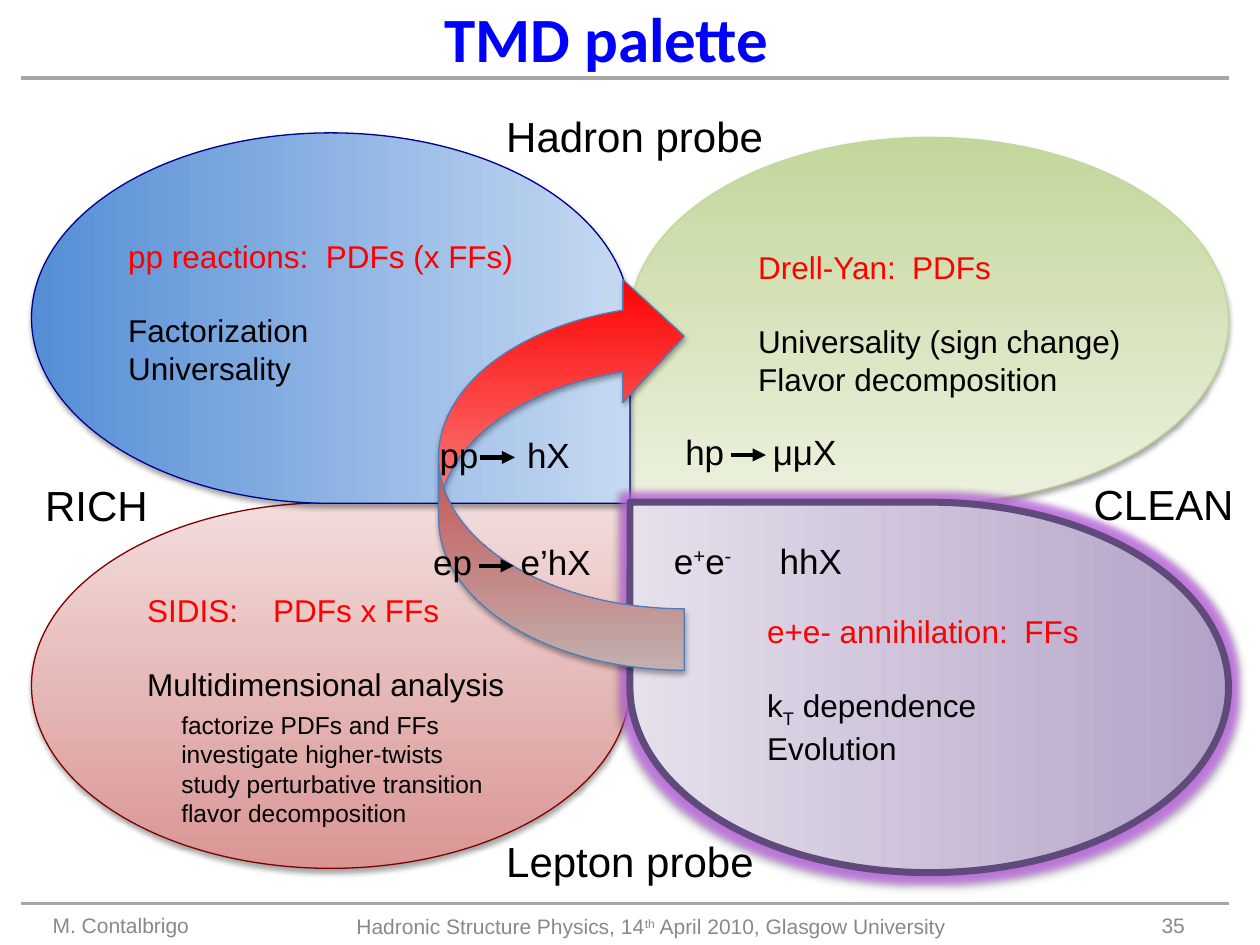
from lxml import etree
from pptx import Presentation
from pptx.dml.color import RGBColor
from pptx.enum.shapes import MSO_CONNECTOR, MSO_SHAPE
from pptx.enum.text import MSO_ANCHOR, MSO_AUTO_SIZE, PP_ALIGN
from pptx.oxml import parse_xml
from pptx.oxml.ns import qn
from pptx.util import Pt

TEARDROP = MSO_SHAPE.TEAR
CURVED_ARROW = MSO_SHAPE.CURVED_LEFT_ARROW
STRAIGHT = MSO_CONNECTOR.STRAIGHT
LEFT, CENTER, RIGHT = PP_ALIGN.LEFT, PP_ALIGN.CENTER, PP_ALIGN.RIGHT
TOP, MIDDLE, BOTTOM = MSO_ANCHOR.TOP, MSO_ANCHOR.MIDDLE, MSO_ANCHOR.BOTTOM
NO_AUTOFIT = MSO_AUTO_SIZE.NONE

BLACK, RED, BLUE, GREY, RULE = "000000", "FF0000", "0000FF", "898989", "A6A6A6"
SUPER, SUB = 30, -25
DRAWING_NS = "http://schemas.openxmlformats.org/drawingml/2006/main"
SHADOW = (
    '<a:outerShdw blurRad="40000" dist="23000" dir="5400000" rotWithShape="0">'
    '<a:srgbClr val="000000"><a:alpha val="35000"/></a:srgbClr></a:outerShdw>'
)
GLOW = (
    '<a:glow rad="101600"><a:srgbClr val="C065E6">'
    '<a:alpha val="75000"/></a:srgbClr></a:glow>'
)


def rgb(value):
    return RGBColor.from_string(value)


def effects(content):
    return parse_xml(f'<a:effectLst xmlns:a="{DRAWING_NS}">{content}</a:effectLst>')


class Palette:
    font = "Arial"

    def __init__(self, slide):
        self.slide = slide

    def title(self, box, text):
        heading = self.slide.shapes.title
        heading.left, heading.top, heading.width, heading.height = map(Pt, box)
        self.frame(heading.text_frame, MIDDLE)
        self.paragraph(heading.text_frame.paragraphs[0], [(text,)], 36, BLUE,
                       align=CENTER, font="Calibri", bold=True)

    def frame(self, frame, anchor):
        frame.word_wrap = True
        frame.auto_size = NO_AUTOFIT
        frame.vertical_anchor = anchor

    def paragraph(self, paragraph, runs, size, color=BLACK, align=LEFT, tab=None,
                  indent=0, before=0, font=None, bold=False):
        properties = paragraph._p.get_or_add_pPr()
        if indent:
            properties.set("marL", str(Pt(indent)))
        if before:
            paragraph.space_before = Pt(before)
        if tab:
            stops = etree.SubElement(properties, qn("a:tabLst"))
            etree.SubElement(stops, qn("a:tab"), pos=str(Pt(tab)), algn="l")
        paragraph.alignment = align
        for text, *baseline in runs:
            run = paragraph.add_run()
            run.text = text
            run.font.name = font or self.font
            run.font.size = Pt(size)
            run.font.bold = bold
            run.font.color.rgb = rgb(color)
            if baseline:
                run._r.get_or_add_rPr().set("baseline", str(baseline[0] * 1000))

    def text(self, box, runs, size, anchor=TOP, shapes=None, **style):
        shapes = shapes or self.slide.shapes
        frame = shapes.add_textbox(*map(Pt, box)).text_frame
        self.frame(frame, anchor)
        self.paragraph(frame.paragraphs[0], runs, size, **style)
        return frame

    def topic(self, box, heading, tab, first, *others):
        frame = self.text(box, [(heading,)], 18, color=RED, tab=tab)
        self.paragraph(frame.add_paragraph(), first, 18, before=20.7)
        for line in others:
            self.paragraph(frame.add_paragraph(), [(line,)], 18)
        return frame

    def shape(self, kind, box, rotation, colors, outline, width=0.75, glow=""):
        shape = self.slide.shapes.add_shape(kind, *map(Pt, box))
        shape.rotation = rotation
        shape.fill.gradient()
        shape.fill.gradient_angle = 90
        for stop, color, position in zip(shape.fill.gradient_stops, colors, (0, 1)):
            stop.color.rgb = rgb(color)
            stop.position = position
        shape.line.color.rgb = rgb(outline)
        shape.line.width = Pt(width)
        shape._element.spPr.append(effects(glow + SHADOW))

    def petal(self, center, size, rotation, colors, outline, **style):
        (x, y), (w, h) = center, size
        self.shape(TEARDROP, (x - w / 2, y - h / 2, w, h), rotation, colors, outline, **style)

    def line(self, x1, x2, y, color, width, arrow=False, shapes=None):
        shapes = shapes or self.slide.shapes
        line = shapes.add_connector(STRAIGHT, *map(Pt, (x1, y, x2, y)))
        line.line.color.rgb = rgb(color)
        line.line.width = Pt(width)
        if arrow:
            etree.SubElement(line.line._get_or_add_ln(), qn("a:tailEnd"), type="triangle")
        line._element.spPr.append(effects(""))

    def reaction(self, box, formula, arrow_x, arrow_y):
        shapes = self.slide.shapes.add_group_shape().shapes
        self.text(box, [(formula,)], 20, tab=50, shapes=shapes)
        self.line(arrow_x, arrow_x + 20, arrow_y, BLACK, 2.5, arrow=True, shapes=shapes)


def main():
    deck = Presentation()
    deck.slide_width, deck.slide_height = Pt(720), Pt(540)
    palette = Palette(deck.slides.add_slide(deck.slide_layouts[5]))

    palette.title((245.5, -4, 202, 51), "TMD palette")

    left_x, right_x, top_y, bottom_y = 189, 531, 183, 391.7
    wide, tall = (342, 209), (211.7, 342)
    palette.petal((right_x, top_y), wide, 180, ("C3D69B", "EBF1DE"), "C3D69B")
    palette.petal((left_x, bottom_y), wide, 0, ("D99694", "F2DCDB"), "800000")
    palette.petal((left_x, 181.8), tall, 90, ("558ED5", "C6D9F1"), "000090")
    palette.petal((right_x, 392.8), tall, 270, ("B3A2C7", "E6E0EC"), "604A7B",
                  width=4, glow=GLOW)

    palette.topic((431.3, 346.3, 221, 95), "e+e- annihilation:\tFFs", 147,
                  [("k",), ("T", SUB), (" dependence",)], "Evolution")
    palette.topic((426.2, 138.2, 226, 95), "Drell-Yan:\tPDFs", 88,
                  [("Universality (sign change)",)], "Flavor decomposition")
    sidis = palette.topic((77, 334.1, 234, 146), "SIDIS:\tPDFs x FFs", 72,
                          [("Multidimensional analysis",)])
    studies = ("factorize PDFs and FFs", "investigate higher-twists",
               "study perturbative transition", "flavor decomposition")
    for number, study in enumerate(studies):
        palette.paragraph(sidis.add_paragraph(), [(study,)], 14, indent=19.5,
                          before=0 if number else 4)
    palette.topic((66.2, 131.8, 247, 95), "pp reactions:\tPDFs (x FFs)", 113,
                  [("Factorization",)], "Universality")

    for label, x, y, width in (("RICH", 18.7, 270.7, 75), ("CLEAN", 617.8, 270, 96),
                               ("Hadron probe", 282.2, 59.8, 164),
                               ("Lepton probe", 282.2, 473.8, 160)):
        palette.text((x, y, width, 36), [(label,)], 24)

    palette.shape(CURVED_ARROW, (250.6, 157, 140.4, 226), 180,
                  ("FF0000", "F2DCDB"), "4B7EBC")

    for rule_y in (44.6, 516.2):
        palette.line(12.2, 702, rule_y, RULE, 2)
    event = [("Hadronic Structure Physics, 14",), ("th", SUPER),
             (" April 2010, Glasgow University",)]
    for runs, x, y, width, align in (([("M. Contalbrigo",)], 23, 510.5, 168, LEFT),
                                     (event, 140, 511.2, 464, CENTER),
                                     ([("35",)], 516.2, 510.5, 168, RIGHT)):
        palette.text((x, y, width, 28.8), runs, 12, BOTTOM, color=GREY, align=align)

    palette.text((378, 304.6, 114, 31.7),
                 [("e",), ("+", SUPER), ("e",), ("-", SUPER), ("\thhX",)], 20, tab=60.5)
    palette.reaction((240.5, 305.3, 108, 31.7), "ep\te’hX", 273.6, 323.3)
    palette.reaction((384.5, 242.6, 104, 31.7), "hp\tμμX", 417.6, 260)
    palette.reaction((244.1, 244.1, 92, 31.7), "pp\thX", 274.3, 261.4)

    deck.save("out.pptx")


if __name__ == "__main__":
    main()
